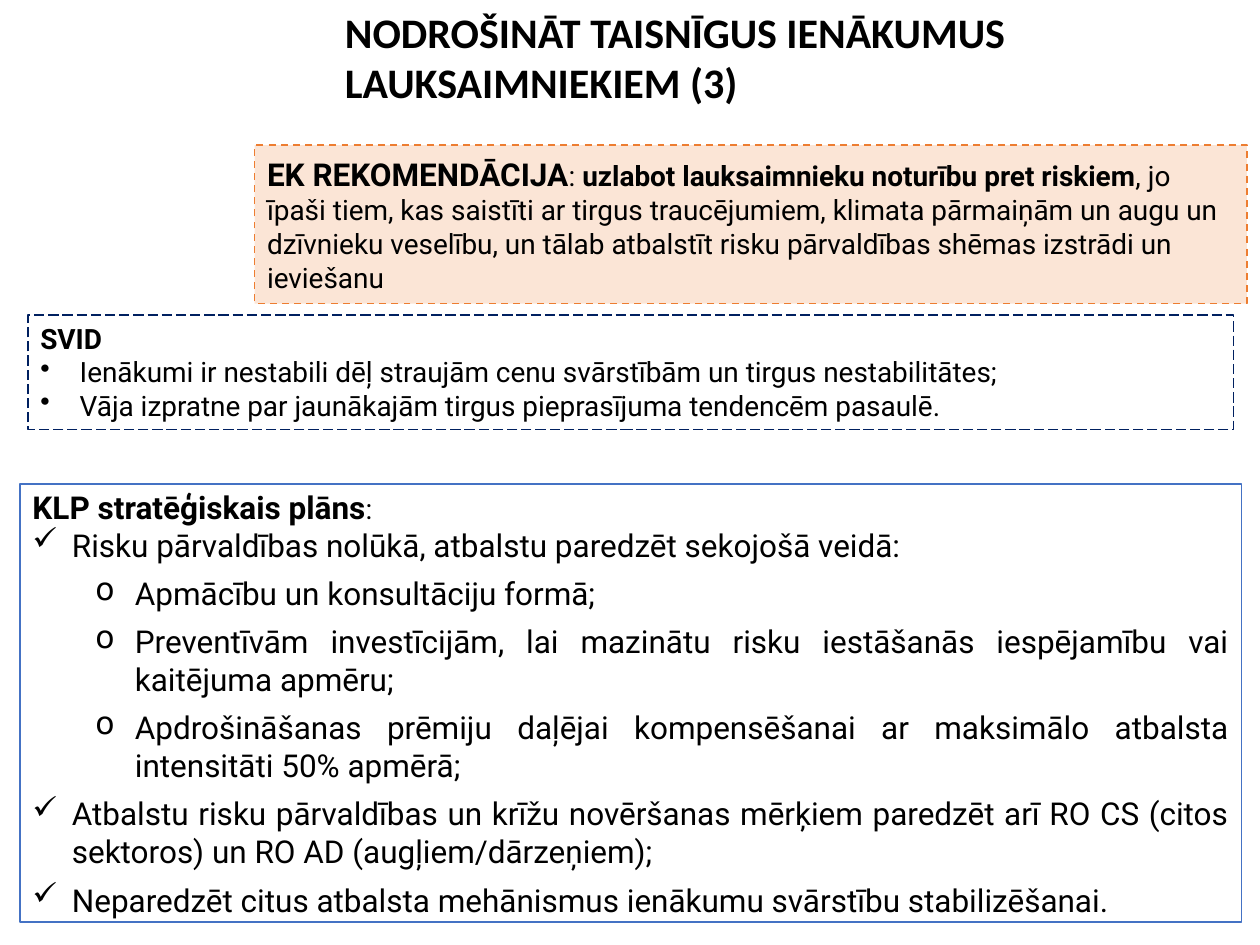
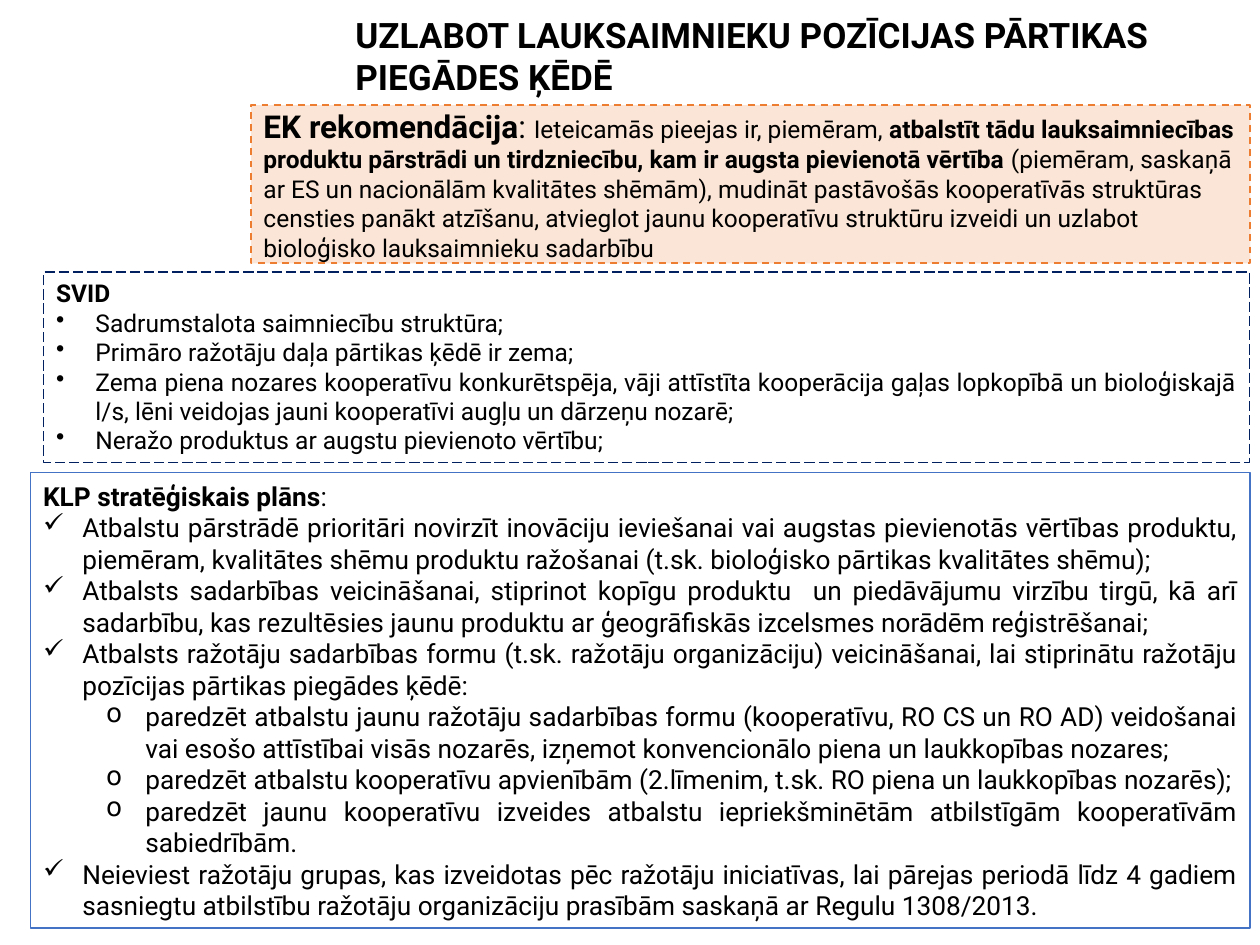
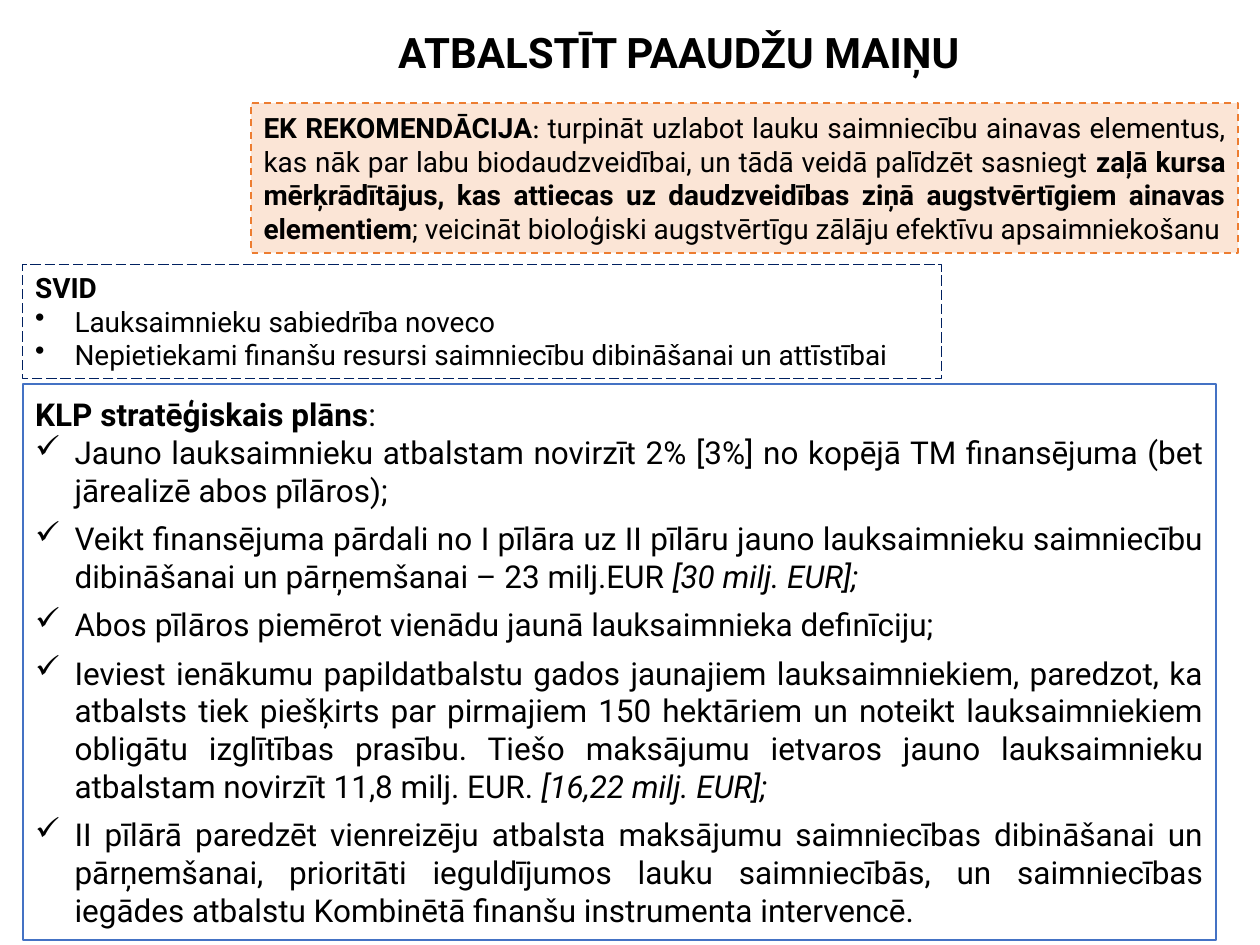
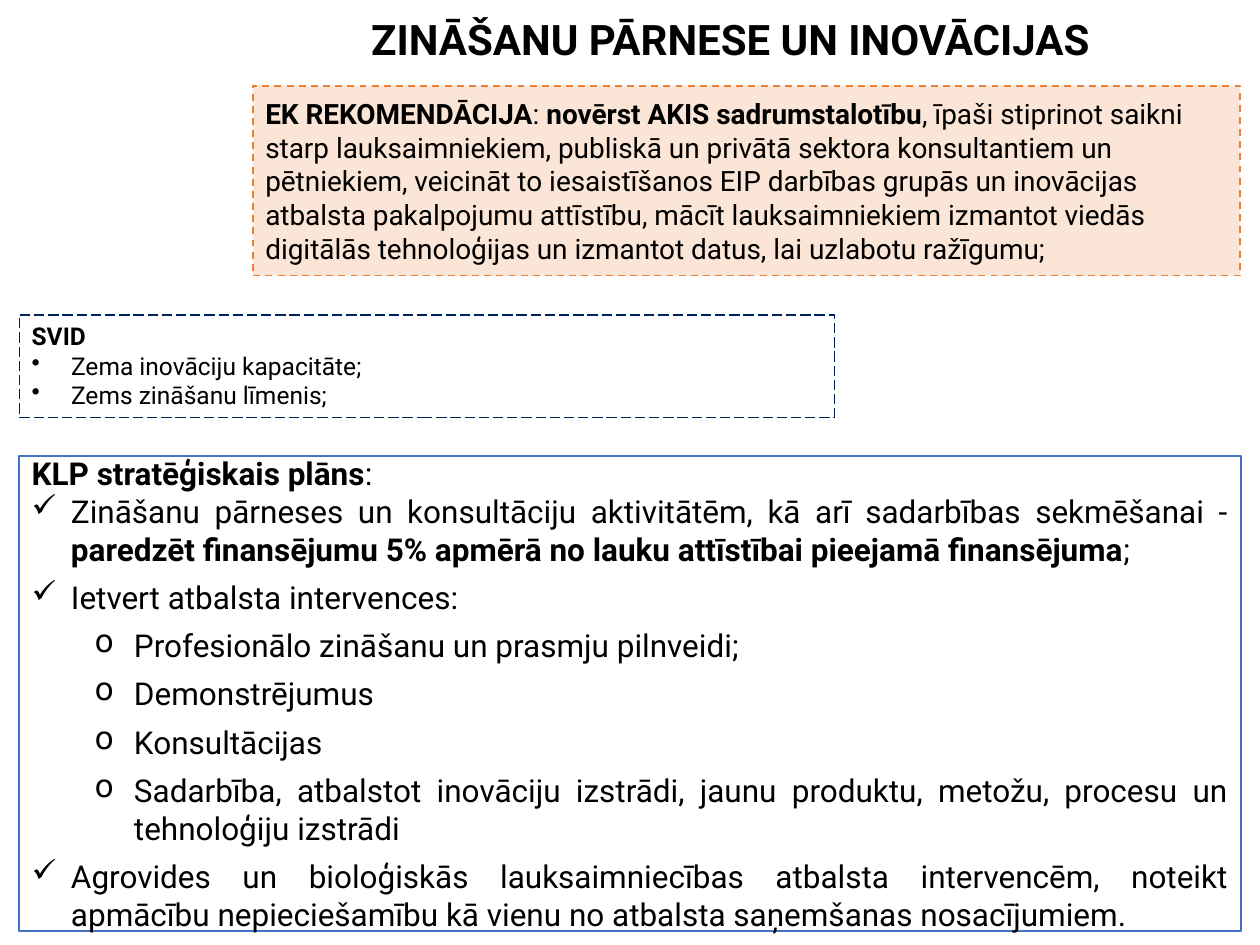
"""Build four slides on farm policy: a title, a recommendation, a SWOT box and a plan on each."""
from dataclasses import dataclass
from typing import Optional, Union

import pptx
import pptx.dml.color
import pptx.enum.dml
import pptx.enum.shapes
import pptx.enum.text
import pptx.util
from lxml import etree
from pptx.oxml.ns import qn

Pt = pptx.util.Pt
RGB = pptx.dml.color.RGBColor
Dash = pptx.enum.dml.MSO_LINE
Align = pptx.enum.text.PP_ALIGN
Anchor = pptx.enum.text.MSO_ANCHOR
Fit = pptx.enum.text.MSO_AUTO_SIZE
Area = tuple[float, float, float, float]


@dataclass(frozen=True)
class Theme:
    """Colours, fonts and type sizes."""
    ink: RGB = RGB(0x00, 0x00, 0x00)
    white: RGB = RGB(0xFF, 0xFF, 0xFF)
    peach: RGB = RGB(0xFB, 0xE5, 0xD6)
    orange: RGB = RGB(0xED, 0x7D, 0x31)
    navy: RGB = RGB(0x00, 0x20, 0x60)
    blue: RGB = RGB(0x44, 0x72, 0xC4)
    font: str = "Roboto"
    alt: str = "Calibri"
    large: float = 24
    title: float = 20
    lead: float = 18
    body: float = 16
    dense: float = 15
    small: float = 14


THEME = Theme()


@dataclass(frozen=True)
class Run:
    """A stretch of text that differs from its paragraph."""
    text: str
    bold: Optional[bool] = None
    italic: Optional[bool] = None
    size: Optional[float] = None
    font: Optional[str] = None


@dataclass(frozen=True)
class Mark:
    """A bullet with its left indent."""
    sign: str
    left: float


DOT = Mark("•", 22.5)
TICK = Mark("✓", 22.5)
RING = Mark("o", 58.5)
HANG = 22.5


@dataclass(frozen=True)
class Para:
    """A paragraph of runs in one base style."""
    runs: tuple[Union[str, Run], ...]
    size: float
    mark: Optional[Mark] = None
    bold: bool = False
    after: float = 0
    align: Align = Align.JUSTIFY
    font: str = THEME.font


@dataclass(frozen=True)
class Style:
    """The look of a box."""
    fill: Optional[RGB]
    line: RGB
    width: float
    dash: Optional[Dash]
    anchor: Anchor
    grow: bool


ADVICE = Style(THEME.peach, THEME.orange, 1, Dash.DASH, Anchor.MIDDLE, False)
SWOT = Style(None, THEME.navy, 0.75, Dash.LONG_DASH, Anchor.TOP, True)
PLAN = Style(THEME.white, THEME.blue, 1, None, Anchor.MIDDLE, False)


@dataclass(frozen=True)
class Box:
    """A styled box with paragraphs."""
    area: Area
    style: Style
    paras: tuple[Para, ...]


@dataclass(frozen=True)
class Page:
    """A slide: its title and its boxes."""
    area: Area
    title: tuple[Para, ...]
    boxes: tuple[Box, ...]


def head(*lines: str, size: float = THEME.large, font: str = THEME.font) -> tuple[Para, ...]:
    """Return the title paragraphs."""
    return tuple(Para((line,), size, bold=True, align=Align.LEFT, font=font) for line in lines)


def advice(area: Area, *runs: Union[str, Run], size: float = THEME.body,
           align: Align = Align.LEFT) -> Box:
    """Return a recommendation box."""
    return Box(area, ADVICE, (Para(runs, size, align=align),))


def swot(area: Area, *items: str, size: float = THEME.body) -> Box:
    """Return a SWOT box with dotted items."""
    first = Para(("SVID",), size, bold=True)
    return Box(area, SWOT, (first, *(Para((item,), size, DOT) for item in items)))


def plan(area: Area, *items: tuple[Mark, tuple[Union[str, Run], ...]],
         size: float = THEME.lead, after: float = 6, colon: Optional[float] = None) -> Box:
    """Return a strategic plan box with marked items."""
    first = Para((Run("KLP stratēģiskais plāns", bold=True), Run(":", size=colon)), size)
    rest = (Para(runs, size, mark, after=after) for mark, runs in items)
    return Box(area, PLAN, (first, *rest))


def tick(*runs: Union[str, Run]) -> tuple[Mark, tuple[Union[str, Run], ...]]:
    """Return a ticked item."""
    return TICK, runs


def ring(*runs: Union[str, Run]) -> tuple[Mark, tuple[Union[str, Run], ...]]:
    """Return an inner item."""
    return RING, runs


def bullet(para, mark: Mark) -> None:
    """Give a paragraph a hanging bullet."""
    props = para._p.get_or_add_pPr()
    props.set("marL", str(Pt(mark.left)))
    props.set("indent", str(-Pt(HANG)))
    etree.SubElement(props, qn("a:buChar")).set("char", mark.sign)


def write(frame, paras: tuple[Para, ...]) -> None:
    """Fill a text frame with paragraphs."""
    frame.word_wrap = True
    for spot, item in enumerate(paras):
        para = frame.add_paragraph() if spot else frame.paragraphs[0]
        para.alignment = item.align
        para.space_after = Pt(item.after)
        if item.mark:
            bullet(para, item.mark)
        font = para.font
        font.name, font.size, font.bold = item.font, Pt(item.size), item.bold
        font.color.rgb = THEME.ink
        for part in item.runs:
            part = Run(part) if isinstance(part, str) else part
            run = para.add_run()
            run.text = part.text
            if part.bold is not None:
                run.font.bold = part.bold
            if part.italic is not None:
                run.font.italic = part.italic
            if part.size:
                run.font.size = Pt(part.size)
            if part.font:
                run.font.name = part.font


def draw(slide, box: Box) -> None:
    """Draw a box and its text."""
    style = box.style
    shape = slide.shapes.add_shape(pptx.enum.shapes.MSO_SHAPE.RECTANGLE, *map(Pt, box.area))
    shape.shadow.inherit = False
    if style.fill is None:
        shape.fill.background()
    else:
        shape.fill.solid()
        shape.fill.fore_color.rgb = style.fill
    shape.line.color.rgb = style.line
    shape.line.width = Pt(style.width)
    if style.dash:
        shape.line.dash_style = style.dash
    frame = shape.text_frame
    frame.vertical_anchor = style.anchor
    frame.auto_size = Fit.SHAPE_TO_FIT_TEXT if style.grow else Fit.NONE
    write(frame, box.paras)


def build(deck, page: Page) -> None:
    """Add one slide."""
    slide = deck.slides.add_slide(deck.slide_layouts[6])
    frame = slide.shapes.add_textbox(*map(Pt, page.area)).text_frame
    frame.auto_size = Fit.SHAPE_TO_FIT_TEXT
    write(frame, page.title)
    for box in page.boxes:
        draw(slide, box)


INCOME = Page(
    (190, 0, 456, 65.5),
    head("NODROŠINĀT TAISNĪGUS IENĀKUMUS", "LAUKSAIMNIEKIEM (3)", font=THEME.alt),
    (
        advice(
            (145.5, 83, 567, 90.5),
            Run("EK REKOMENDĀCIJA", bold=True, size=THEME.lead), ": ",
            Run("uzlabot lauksaimnieku noturību pret riskiem", bold=True),
            ", jo īpaši tiem, kas saistīti ar tirgus traucējumiem, klimata pārmaiņām un augu un "
            "dzīvnieku veselību, un tālab atbalstīt risku pārvaldības shēmas izstrādi un ieviešanu",
        ),
        plan(
            (11.5, 276.5, 698, 250.5),
            tick("Risku pārvaldības nolūkā, atbalstu paredzēt sekojošā veidā:"),
            ring("Apmācību un konsultāciju formā;"),
            ring("Preventīvām investīcijām, lai mazinātu risku iestāšanās iespējamību vai "
                 "kaitējuma apmēru;"),
            ring("Apdrošināšanas prēmiju daļējai kompensēšanai ar maksimālo atbalsta "
                 "intensitāti 50% apmērā;"),
            tick("Atbalstu risku pārvaldības un krīžu novēršanas mērķiem paredzēt arī RO CS "
                 "(citos sektoros) un RO AD (augļiem/dārzeņiem);"),
            tick("Neparedzēt citus atbalsta mehānismus ienākumu svārstību stabilizēšanai."),
            colon=THEME.body,
        ),
        swot(
            (16, 180, 689, 65.5),
            "Ienākumi ir nestabili dēļ straujām cenu svārstībām un tirgus nestabilitātes;",
            "Vāja izpratne par jaunākajām tirgus pieprasījuma tendencēm pasaulē.",
        ),
    ),
)

CHAIN = Page(
    (196, 4, 511, 55.5),
    head("UZLABOT LAUKSAIMNIEKU POZĪCIJAS PĀRTIKAS PIEGĀDES ĶĒDĒ", size=THEME.title),
    (
        advice(
            (143.5, 60, 571, 90.5),
            Run("EK rekomendācija", bold=True, size=THEME.lead), Run(": ", size=THEME.lead),
            "Ieteicamās pieejas ir, piemēram, ",
            Run("atbalstīt tādu lauksaimniecības produktu pārstrādi un tirdzniecību, kam ir "
                "augsta pievienotā vērtība ", bold=True),
            "(piemēram, saskaņā ar ES un nacionālām kvalitātes shēmām), mudināt pastāvošās "
            "kooperatīvās struktūras censties panākt atzīšanu, atvieglot jaunu kooperatīvu "
            "struktūru izveidi un uzlabot bioloģisko lauksaimnieku sadarbību",
            size=THEME.small,
        ),
        swot(
            (25, 155.5, 689, 109),
            "Sadrumstalota saimniecību struktūra;",
            "Primāro ražotāju daļa pārtikas ķēdē ir zema;",
            "Zema piena nozares kooperatīvu konkurētspēja, vāji attīstīta kooperācija gaļas "
            "lopkopībā un bioloģiskajā l/s, lēni veidojas jauni kooperatīvi augļu un dārzeņu nozarē;",
            "Neražo produktus ar augstu pievienoto vērtību;",
            size=THEME.small,
        ),
        plan(
            (17.5, 270, 697, 260.5),
            tick("Atbalstu pārstrādē prioritāri novirzīt inovāciju ieviešanai vai augstas "
                 "pievienotās vērtības produktu, piemēram, kvalitātes shēmu produktu ražošanai "
                 "(t.sk. bioloģisko pārtikas kvalitātes shēmu);"),
            tick("Atbalsts sadarbības veicināšanai, stiprinot kopīgu produktu  un piedāvājumu "
                 "virzību tirgū, kā arī sadarbību, kas rezultēsies jaunu produktu ar "
                 "ģeogrāfiskās izcelsmes norādēm reģistrēšanai;"),
            tick("Atbalsts ražotāju sadarbības formu (t.sk. ražotāju organizāciju) veicināšanai, "
                 "lai stiprinātu ražotāju pozīcijas pārtikas piegādes ķēdē:"),
            ring("paredzēt atbalstu jaunu ražotāju sadarbības formu (kooperatīvu, RO CS un RO AD) "
                 "veidošanai vai esošo attīstībai visās nozarēs, izņemot konvencionālo piena un "
                 "laukkopības nozares;"),
            ring("paredzēt atbalstu kooperatīvu apvienībām (2.līmenim, t.sk. RO piena un "
                 "laukkopības nozarēs);"),
            ring("paredzēt jaunu kooperatīvu izveides atbalstu iepriekšminētām atbilstīgām "
                 "kooperatīvām sabiedrībām."),
            tick("Neieviest ražotāju grupas, kas izveidotas pēc ražotāju iniciatīvas, lai pārejas "
                 "periodā līdz 4 gadiem sasniegtu atbilstību ražotāju organizāciju prasībām "
                 "saskaņā ar Regulu 1308/2013."),
            size=THEME.dense, after=0,
        ),
    ),
)

YOUTH = Page(
    (220.5, 11.5, 487, 36),
    head("ATBALSTĪT PAAUDŽU MAIŅU"),
    (
        advice(
            (143.5, 59, 564, 85.5),
            Run("EK REKOMENDĀCIJA", bold=True), Run(": ", font=THEME.alt),
            "turpināt uzlabot lauku saimniecību ainavas elementus, kas nāk par labu "
            "biodaudzveidībai, un tādā veidā palīdzēt sasniegt ",
            Run("zaļā kursa mērķrādītājus, kas attiecas uz daudzveidības ziņā augstvērtīgiem "
                "ainavas elementiem", bold=True),
            "; veicināt bioloģiski augstvērtīgu zālāju efektīvu apsaimniekošanu",
            align=Align.JUSTIFY,
        ),
        swot(
            (13, 151, 525, 65.5),
            "Lauksaimnieku sabiedrība noveco",
            "Nepietiekami finanšu resursi saimniecību dibināšanai un attīstībai",
        ),
        plan(
            (13, 219.5, 682, 317.5),
            tick("Jauno lauksaimnieku atbalstam novirzīt 2% [3%] no kopējā TM finansējuma "
                 "(bet jārealizē abos pīlāros);"),
            tick("Veikt finansējuma pārdali no I pīlāra uz II pīlāru jauno lauksaimnieku "
                 "saimniecību dibināšanai un pārņemšanai – 23 milj.EUR ",
                 Run("[30 milj. EUR];", italic=True)),
            tick("Abos pīlāros piemērot vienādu jaunā lauksaimnieka definīciju;"),
            tick("Ieviest ienākumu papildatbalstu gados jaunajiem lauksaimniekiem, paredzot, ka "
                 "atbalsts tiek piešķirts par pirmajiem 150 hektāriem un noteikt lauksaimniekiem "
                 "obligātu izglītības prasību. Tiešo maksājumu ietvaros jauno lauksaimnieku "
                 "atbalstam novirzīt 11,8 milj. EUR. ",
                 Run("[16,22 milj. EUR];", italic=True)),
            tick("II pīlārā paredzēt vienreizēju atbalsta maksājumu saimniecības dibināšanai un "
                 "pārņemšanai, prioritāti ieguldījumos lauku saimniecībās, un saimniecības "
                 "iegādes atbalstu Kombinētā finanšu instrumenta intervencē."),
        ),
    ),
)

SKILL = Page(
    (205, 4, 504, 36),
    head("ZINĀŠANU PĀRNESE UN INOVĀCIJAS"),
    (
        advice(
            (144.5, 49, 564, 108.5),
            Run("EK REKOMENDĀCIJA", bold=True), ": ",
            Run("novērst AKIS sadrumstalotību", bold=True),
            ", īpaši stiprinot saikni starp lauksaimniekiem, publiskā un privātā sektora "
            "konsultantiem un pētniekiem, veicināt to iesaistīšanos EIP darbības grupās un "
            "inovācijas atbalsta pakalpojumu attīstību, mācīt lauksaimniekiem izmantot viedās "
            "digitālās tehnoloģijas un izmantot datus, lai uzlabotu ražīgumu;",
        ),
        swot(
            (11, 180, 466, 58.5),
            "Zema inovāciju kapacitāte;",
            "Zems zināšanu līmenis;",
            size=THEME.small,
        ),
        plan(
            (11, 260.5, 698, 271.5),
            tick("Zināšanu pārneses un konsultāciju aktivitātēm, kā arī sadarbības sekmēšanai - ",
                 Run("paredzēt finansējumu 5% apmērā no lauku attīstībai pieejamā finansējuma",
                     bold=True), ";"),
            tick("Ietvert atbalsta intervences:"),
            ring("Profesionālo zināšanu un prasmju pilnveidi;"),
            ring("Demonstrējumus"),
            ring("Konsultācijas"),
            ring("Sadarbība, atbalstot inovāciju izstrādi, jaunu produktu, metožu, procesu un "
                 "tehnoloģiju izstrādi"),
            tick("Agrovides un bioloģiskās lauksaimniecības atbalsta intervencēm, noteikt "
                 "apmācību nepieciešamību kā vienu no atbalsta saņemšanas nosacījumiem."),
        ),
    ),
)


def main() -> None:
    """Build and save the deck."""
    deck = pptx.Presentation()
    deck.slide_width, deck.slide_height = Pt(720), Pt(540)
    for page in (INCOME, CHAIN, YOUTH, SKILL):
        build(deck, page)
    deck.save("out.pptx")


if __name__ == "__main__":
    main()
